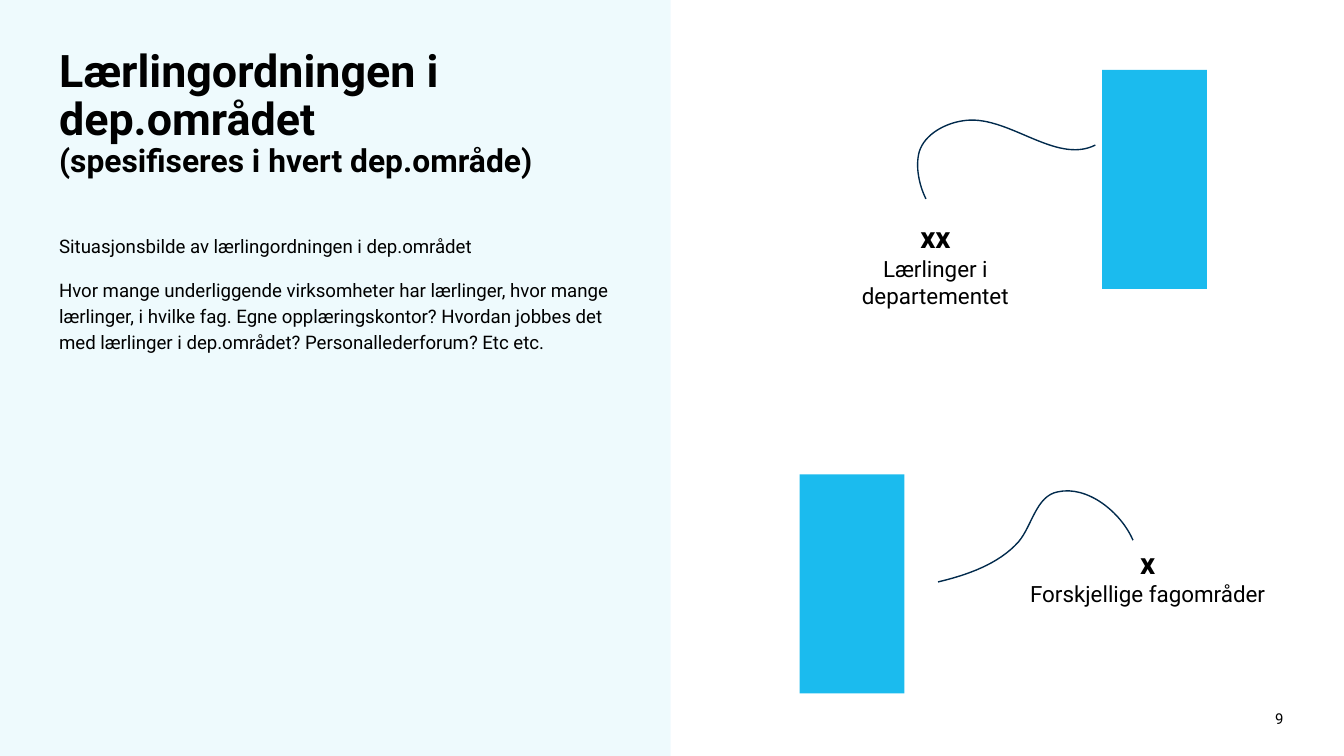
from dataclasses import dataclass

from lxml.etree import SubElement
from pptx import Presentation
from pptx.dml.color import RGBColor
from pptx.enum.shapes import MSO_SHAPE as Preset
from pptx.enum.text import MSO_ANCHOR as Anchor, PP_ALIGN as Align
from pptx.oxml.ns import qn
from pptx.util import Inches, Pt


@dataclass(frozen=True)
class Theme:
    """Colours, font and type sizes of the slide."""
    font: str = "Roboto"
    text: RGBColor = RGBColor(0, 0, 0)
    accent: RGBColor = RGBColor(0x1B, 0xBB, 0xEE)
    line: RGBColor = RGBColor(0x01, 0x2A, 0x4C)
    panel_alpha: int = 7
    title: int = 24
    subtitle: int = 17
    figure: int = 16
    label: int = 12
    body: int = 10
    number: int = 8


THEME = Theme()


def add_block(slide, box):
    """Add a borderless accent rectangle."""
    shape = slide.shapes.add_shape(Preset.RECTANGLE, *map(Inches, box))
    shape.shadow.inherit = False
    shape.fill.solid()
    shape.fill.fore_color.rgb = THEME.accent
    shape.line.fill.background()
    return shape


def add_text(slide, box, paragraphs, margin=0.0, align=Align.LEFT):
    """Add wrapped text, each paragraph given as (text, sizes of its lines, bold)."""
    text_frame = slide.shapes.add_textbox(*map(Inches, box)).text_frame
    text_frame.word_wrap = True
    text_frame.margin_left = text_frame.margin_right = Inches(margin)
    text_frame.margin_top = text_frame.margin_bottom = Inches(margin)
    text_frame.text = "\n".join(text for text, _, _ in paragraphs)
    for paragraph, (_, sizes, bold) in zip(text_frame.paragraphs, paragraphs):
        paragraph.alignment = align
        for run, size in zip(paragraph.runs, sizes):
            run.font.name = THEME.font
            run.font.size = Pt(size)
            run.font.bold = bold
            run.font.color.rgb = THEME.text
    return text_frame


def add_curve(slide, origin, points):
    """Draw an open Bézier curve: a start, then triples of control, control and end."""
    left, top = origin
    start, *rest = [(Inches(left + x), Inches(top + y)) for x, y in points]
    builder = slide.shapes.build_freeform(*start)
    builder.add_line_segments(rest, close=False)
    shape = builder.convert_to_shape()
    shape.shadow.inherit = False
    shape.fill.background()
    shape.line.color.rgb = THEME.line
    shape.line.width = Pt(0.75)
    outline = next(shape.element.iter(qn("a:path")))
    segments = outline.findall(qn("a:lnTo"))
    for first in range(0, len(segments), 3):
        bezier = SubElement(outline, qn("a:cubicBezTo"))
        for segment in segments[first:first + 3]:
            bezier.append(segment[0])
            outline.remove(segment)


def add_intro(slide, box):
    """Fill the tinted left panel with its title and body text."""
    left, top, _, _ = box
    panel = add_block(slide, box)
    color = next(panel.element.spPr.iter(qn("a:srgbClr")))
    SubElement(color, qn("a:alpha"), val=str(THEME.panel_alpha * 1000))

    title = "Lærlingordningen i dep.området\v(spesifiseres i hvert dep.område)"
    heading = add_text(slide, (left + 0.44, top + 0.38, 4.14, 0.58),
                       [(title, (THEME.title, THEME.subtitle), True)])
    heading.paragraphs[0].line_spacing = 0.9

    texts = (
        "Situasjonsbilde av lærlingordningen i dep.området",
        "Hvor mange underliggende virksomheter har lærlinger, hvor mange lærlinger, "
        "i hvilke fag. Egne opplæringskontor? Hvordan jobbes det med lærlinger i "
        "dep.området? Personallederforum? Etc etc.",
    )
    body = add_text(slide, (left + 0.44, top + 1.43, 4.14, 3.47),
                    [(text, (THEME.body,), False) for text in texts])
    body.margin_top = Inches(0.31)
    for paragraph in body.paragraphs:
        paragraph.line_spacing = 1.15
    body.paragraphs[1].space_before = Pt(10)


def add_fact(slide, box, block_left, text_box, figure, label, curve):
    """Place a block, a figure with its label and the curve between them."""
    left, top, _, height = box
    text_left, text_top, text_width, text_height = text_box
    add_block(slide, (left + block_left, top, 0.78, height))
    add_text(slide, (left + text_left, top + text_top, text_width, text_height),
             [(figure, (THEME.figure,), True), (label, (THEME.label,), False)],
             margin=0.1, align=Align.CENTER)
    add_curve(slide, (left, top), curve)


def add_page_number(slide, box, number):
    """Place the page number, right-aligned in its box."""
    text_frame = add_text(slide, box, [(number, (THEME.number,), False)], align=Align.RIGHT)
    text_frame.vertical_anchor = Anchor.MIDDLE


def main():
    """Build and save the slide."""
    presentation = Presentation()
    presentation.slide_width = Inches(10)
    presentation.slide_height = presentation.slide_width * 9 // 16
    slide = presentation.slides.add_slide(presentation.slide_layouts[6])

    add_intro(slide, (0, -0.02, 4.99, 5.65))
    add_fact(slide, (5.95, 0.52, 3.03, 1.63), 2.25, (0, 1.01, 2.02, 0.88),
             "xx", "Lærlinger i departementet",
             [(0.94, 0.96), (0.89, 0.86), (0.86, 0.72), (0.89, 0.61),
              (0.93, 0.48), (1.08, 0.4), (1.21, 0.38),
              (1.54, 0.32), (1.9, 0.71), (2.2, 0.56)])
    add_fact(slide, (5.95, 3.53, 3.6, 1.63), 0, (1.58, 0.42, 2.02, 0.67),
             "x", "Forskjellige fagområder",
             [(2.48, 0.49), (2.39, 0.28), (2.14, 0.08), (1.92, 0.13),
              (1.76, 0.16), (1.73, 0.38), (1.63, 0.5),
              (1.48, 0.67), (1.24, 0.75), (1.03, 0.8)])
    add_page_number(slide, (9.39, 5.27, 0.16, 0.15), "9")

    presentation.save("out.pptx")


if __name__ == "__main__":
    main()
